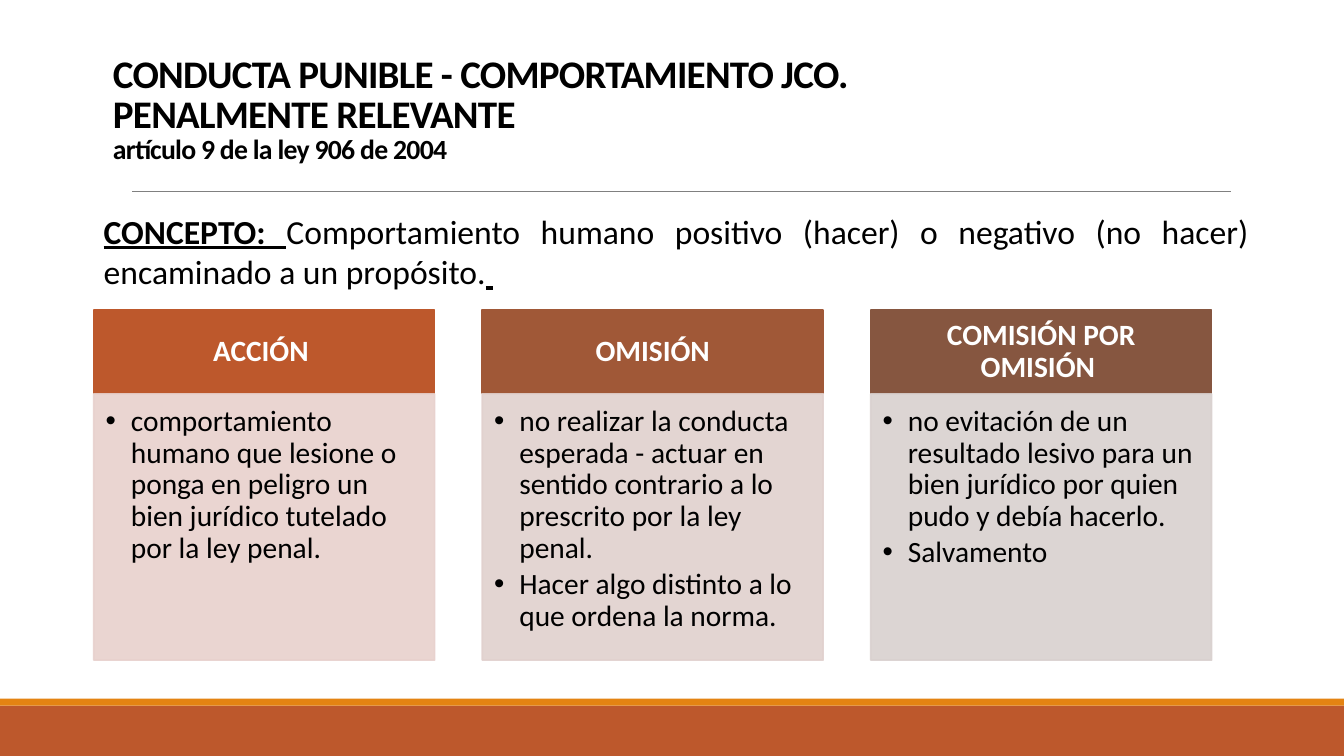
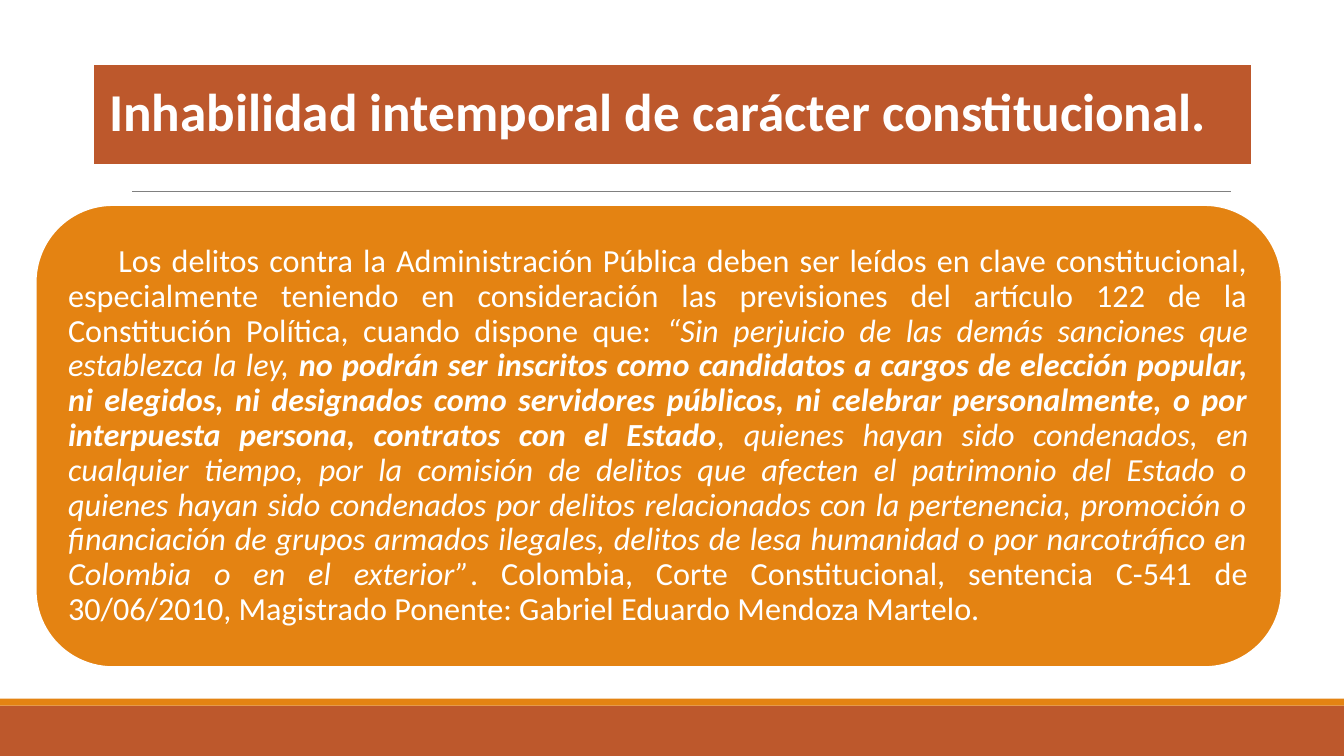
from dataclasses import dataclass

from lxml.etree import SubElement
from pptx import Presentation
from pptx.dml.color import RGBColor as RGB
from pptx.enum.shapes import MSO_CONNECTOR as CONN, MSO_SHAPE as SHAPE
from pptx.enum.text import MSO_ANCHOR as ANCHOR, MSO_AUTO_SIZE as AUTO, PP_ALIGN as ALIGN
from pptx.oxml.ns import qn
from pptx.util import Pt


@dataclass(frozen=True)
class Theme:
    font: str = "Calibri"
    rust: RGB = RGB(0xBD, 0x58, 0x2C)
    orange: RGB = RGB(0xE4, 0x83, 0x12)
    rule: RGB = RGB(0x80, 0x80, 0x80)
    white: RGB = RGB(0xFF, 0xFF, 0xFF)
    black: RGB = RGB(0, 0, 0)
    heads: tuple = (RGB(0xBD, 0x58, 0x2C), RGB(0xA0, 0x58, 0x37), RGB(0x86, 0x56, 0x40))
    bodies: tuple = (RGB(0xE8, 0xD1, 0xCD), RGB(0xE1, 0xD1, 0xCE), RGB(0xD9, 0xD1, 0xCF))
    title: float = 27.9
    subtitle: float = 19.8
    concept: float = 24
    card: float = 21
    banner: float = 38
    quote: float = 23


T = Theme()


def add_box(s, kind, x, y, w, h, fill, line=None):
    sp = s.shapes.add_shape(kind, Pt(x), Pt(y), Pt(w), Pt(h))
    sp.shadow.inherit = False
    sp.fill.solid()
    sp.fill.fore_color.rgb = fill
    if line is None:
        sp.line.fill.background()
    else:
        sp.line.color.rgb = line
        sp.line.width = Pt(1.25)
    return sp


def add_run(p, text, size, color, bold=False, italic=False, underline=False):
    r = p.add_run()
    r.text = text
    f = r.font
    f.name, f.size, f.color.rgb = T.font, Pt(size), color
    f.bold, f.italic, f.underline = bold, italic, underline
    return r


prs = Presentation()
prs.slide_width, prs.slide_height = Pt(960), Pt(540)
layout = prs.slide_layouts[5]

s = prs.slides.add_slide(layout)
rule = s.shapes.add_connector(CONN.STRAIGHT, Pt(94.5), Pt(136.5), Pt(879), Pt(136.5))
rule.line.color.rgb = T.rule
rule.line.width = Pt(0.5)
SubElement(rule.element.spPr, qn("a:effectLst"))
bands = [add_box(s, SHAPE.RECTANGLE, 0, 504, 960, 36, T.rust),
         add_box(s, SHAPE.RECTANGLE, 0, 499, 960, 5, T.orange)]
for sp in bands + [rule]:
    layout.element.cSld.spTree.append(sp.element)

title = s.shapes.title
title.left, title.top, title.width, title.height = Pt(73.5), Pt(56), Pt(652), Pt(65.5)
tf = title.text_frame
tf.auto_size, tf.vertical_anchor = AUTO.NONE, ANCHOR.BOTTOM
p = tf.paragraphs[0]
p.alignment, p.line_spacing = ALIGN.LEFT, 0.85
heading = add_run(p, "CONDUCTA PUNIBLE - COMPORTAMIENTO JCO. PENALMENTE RELEVANTE", T.title, T.black, bold=True)
p.add_line_break()
article = add_run(p, "artículo 9 de la ley 906 de 2004", T.subtitle, T.black, bold=True)
for r in (heading, article):
    r.font._element.set("spc", "-50")

concept = s.shapes.add_textbox(Pt(67), Pt(147), Pt(832), Pt(65.5))
tf = concept.text_frame
tf.word_wrap = True
p = tf.paragraphs[0]
p.alignment = ALIGN.JUSTIFY
add_run(p, "CONCEPTO: ", T.concept, T.black, bold=True, underline=True)
add_run(p, "Comportamiento humano positivo (hacer) o negativo (no hacer) encaminado a un propósito.",
        T.concept, T.black)
add_run(p, " ", T.concept, T.black, bold=True, underline=True)

cards = [
    ("ACCIÓN ", ["comportamiento humano que lesione o ponga en peligro un bien jurídico tutelado por la ley penal."]),
    ("OMISIÓN", ["no realizar la conducta esperada - actuar en sentido contrario a lo prescrito por la ley penal.",
                 "Hacer algo distinto a lo que ordena la norma."]),
    ("COMISIÓN POR OMISIÓN ", ["no evitación de un resultado lesivo para un bien jurídico por quien pudo y debía hacerlo.",
                               "Salvamento"]),
]
card_w, card_step = 243.5, 277.5
for i, (name, points) in enumerate(cards):
    x = 67 + i * card_step
    head = add_box(s, SHAPE.RECTANGLE, x, 221.5, card_w, 59.5, T.heads[i], T.heads[i])
    tf = head.text_frame
    tf.margin_left = tf.margin_right = Pt(11.5)
    tf.margin_top = tf.margin_bottom = Pt(6.5)
    tf.vertical_anchor = ANCHOR.MIDDLE
    p = tf.paragraphs[0]
    p.alignment, p.line_spacing = ALIGN.CENTER, 0.9
    add_run(p, name, T.card, T.white, bold=True)

    body = add_box(s, SHAPE.RECTANGLE, x, 281.5, card_w, 190, T.bodies[i], T.bodies[i])
    for color in body.element.spPr.iter(qn("a:srgbClr")):
        SubElement(color, qn("a:alpha"), val="90000")
    tf = body.text_frame
    tf.margin_left = tf.margin_top = Pt(8.5)
    tf.margin_right, tf.margin_bottom = Pt(11.5), Pt(13)
    tf.vertical_anchor = ANCHOR.TOP
    for j, point in enumerate(points):
        p = tf.add_paragraph() if j else tf.paragraphs[0]
        p.alignment, p.line_spacing, p.space_after = ALIGN.LEFT, 0.9, Pt(3)
        pPr = p._p.get_or_add_pPr()
        pPr.set("marL", str(Pt(18)))
        pPr.set("indent", str(Pt(-18)))
        SubElement(pPr, qn("a:buFont"), typeface="Arial")
        SubElement(pPr, qn("a:buChar"), char="•")
        add_run(p, point, T.card, T.black)

s = prs.slides.add_slide(layout)
title = s.shapes.title
title.left, title.top, title.width, title.height = Pt(66.5), Pt(45.5), Pt(828), Pt(72)
geom = SubElement(title.element.spPr, qn("a:prstGeom"), prst="roundRect")
SubElement(geom, qn("a:avLst"))
title.fill.solid()
title.fill.fore_color.rgb = T.rust
title.line.color.rgb = T.white
title.line.width = Pt(1.25)
tf = title.text_frame
tf.auto_size, tf.vertical_anchor = AUTO.NONE, ANCHOR.MIDDLE
tf.margin_left = tf.margin_right = tf.margin_top = tf.margin_bottom = Pt(11.5)
p = tf.paragraphs[0]
p.alignment, p.line_spacing = ALIGN.LEFT, 0.9
add_run(p, "Inhabilidad intemporal de carácter constitucional.", T.banner, T.white, bold=True)

quote = add_box(s, SHAPE.ROUNDED_RECTANGLE, 25.5, 146.5, 890, 330, T.orange, T.white)
tf = quote.text_frame
tf.margin_left = tf.margin_right = tf.margin_top = tf.margin_bottom = Pt(7)
tf.vertical_anchor = ANCHOR.MIDDLE
p = tf.paragraphs[0]
p.alignment, p.line_spacing = ALIGN.JUSTIFY, 0.9
passages = [
    ("\tLos delitos contra la Administración Pública deben ser leídos en clave constitucional, especialmente "
     "teniendo en consideración las previsiones del artículo 122 de la Constitución Política, cuando dispone que: ",
     False, False),
    ("“Sin perjuicio de las demás sanciones que establezca la ley, ", False, True),
    ("no podrán ser inscritos como candidatos a cargos de elección popular, ni elegidos, ni designados como "
     "servidores públicos, ni celebrar personalmente, o por interpuesta persona, contratos con el Estado",
     True, True),
    (", quienes hayan sido condenados, en cualquier tiempo, por la comisión de delitos que afecten el patrimonio "
     "del Estado o quienes hayan sido condenados por delitos relacionados con la pertenencia, promoción o "
     "financiación de grupos armados ilegales, delitos de lesa humanidad o por narcotráfico en Colombia o en el "
     "exterior”", False, True),
    (". Colombia, Corte Constitucional, sentencia C-541 de 30/06/2010, Magistrado Ponente: Gabriel Eduardo "
     "Mendoza Martelo.", False, False),
]
for text, bold, italic in passages:
    add_run(p, text, T.quote, T.white, bold=bold, italic=italic)

prs.save("out.pptx")
